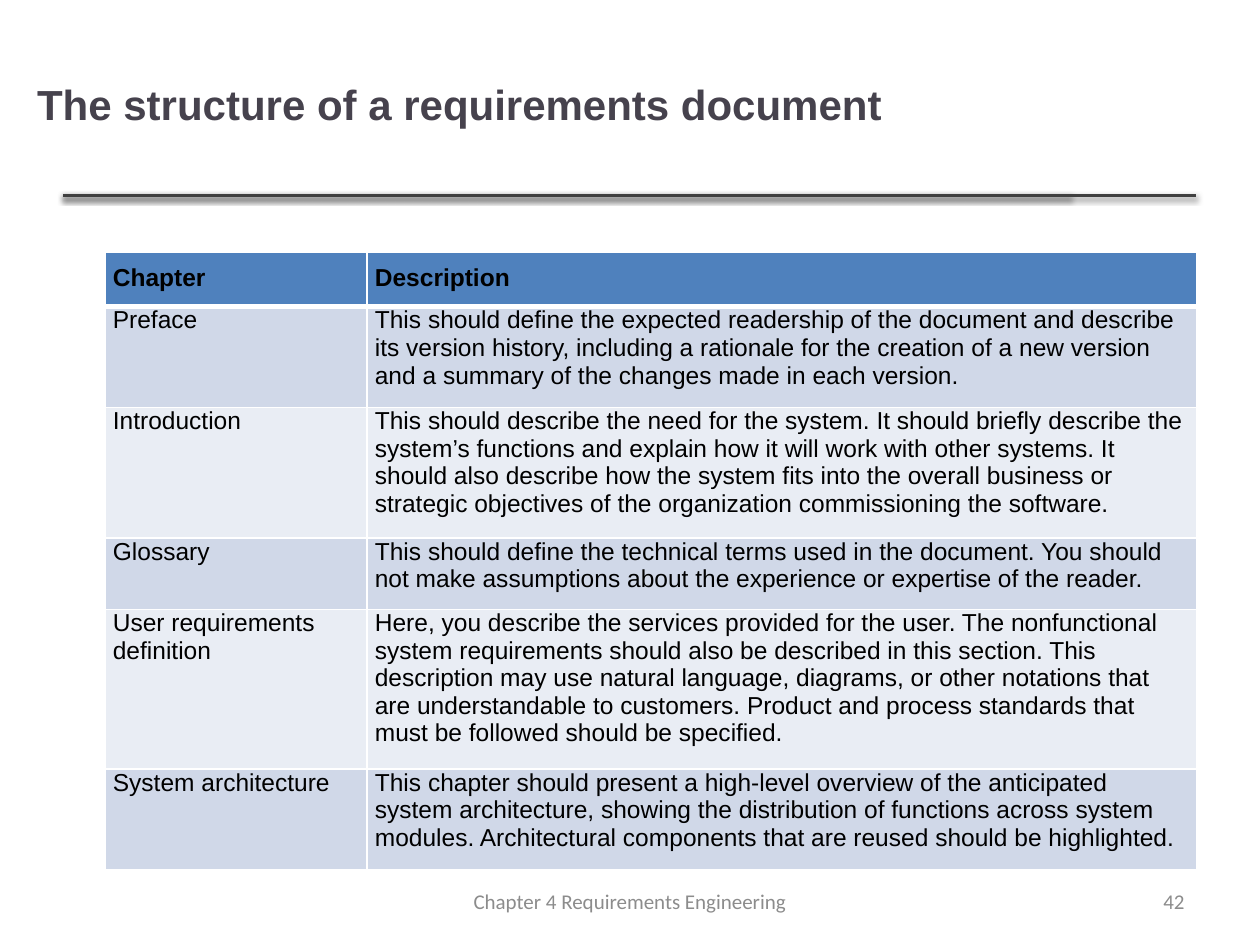
from lxml import etree
from pptx import Presentation
from pptx.dml.color import RGBColor
from pptx.enum.shapes import MSO_CONNECTOR
from pptx.enum.text import MSO_ANCHOR, PP_ALIGN
from pptx.oxml.ns import qn
from pptx.util import Pt

STRAIGHT = MSO_CONNECTOR.STRAIGHT
MIDDLE = MSO_ANCHOR.MIDDLE
LEFT, CENTER, RIGHT, JUSTIFY = PP_ALIGN.LEFT, PP_ALIGN.CENTER, PP_ALIGN.RIGHT, PP_ALIGN.JUSTIFY

BLACK = RGBColor(0x00, 0x00, 0x00)
WHITE = RGBColor(0xFF, 0xFF, 0xFF)
TITLE_GRAY = RGBColor(0x46, 0x42, 0x4D)
RULE_GRAY = RGBColor(0x40, 0x40, 0x40)
FOOTER_GRAY = RGBColor(0x8C, 0x8C, 0x8C)
HEADER_BLUE = RGBColor(0x4F, 0x81, 0xBD)
BANDS = (RGBColor(0xD0, 0xD8, 0xE8), RGBColor(0xE9, 0xED, 0xF4))

COLUMN_WIDTHS = (149.75, 474.25)
ROW_HEIGHT = 29.2
HEADINGS = ("Chapter", "Description")
CHAPTERS = (
    ("Preface", JUSTIFY,
     "This should define the expected readership of the document and describe its version "
     "history, including a rationale for the creation of a new version and a summary of the "
     "changes made in each version."),
    ("Introduction", JUSTIFY,
     "This should describe the need for the system. It should briefly describe the system’s "
     "functions and explain how it will work with other systems. It should also describe how "
     "the system fits into the overall business or strategic objectives of the organization "
     "commissioning the software."),
    ("Glossary", JUSTIFY,
     "This should define the technical terms used in the document. You should not make "
     "assumptions about the experience or expertise of the reader."),
    ("User requirements definition", LEFT,
     "Here, you describe the services provided for the user. The nonfunctional system "
     "requirements should also be described in this section. This description may use natural "
     "language, diagrams, or other notations that are understandable to customers. Product and "
     "process standards that must be followed should be specified."),
    ("System architecture", LEFT,
     "This chapter should present a high-level overview of the anticipated system "
     "architecture, showing the distribution of functions across system modules. Architectural "
     "components that are reused should be highlighted."),
)


def write_text(frame, text, size, color, font, align, bold=False):
    """Put one formatted paragraph into a text frame."""
    frame.text = text
    para = frame.paragraphs[0]
    para.alignment = align
    span = para.runs[0]
    span.font.size = Pt(size)
    span.font.name = font
    span.font.bold = bold
    span.font.color.rgb = color


def add_title(page, text):
    """Place and format the title placeholder."""
    title = page.shapes.title
    title.left, title.top, title.width, title.height = Pt(14), Pt(16.5), Pt(580), Pt(86)
    title.text_frame.vertical_anchor = MIDDLE
    write_text(title.text_frame, text, 24, TITLE_GRAY, "Arial", LEFT, True)


def add_rule(page, right):
    """Draw a horizontal rule with a soft shadow below it."""
    rule = page.shapes.add_connector(STRAIGHT, Pt(36), Pt(111.6), Pt(right), Pt(111.6))
    rule.line.color.rgb = RULE_GRAY
    rule.line.width = Pt(2)
    effects = etree.SubElement(rule._element.spPr, qn("a:effectLst"))
    shadow = etree.SubElement(effects, qn("a:outerShdw"), blurRad=str(Pt(3.1)),
                              dist=str(Pt(1.6)), dir="5400000", rotWithShape="0")
    color = etree.SubElement(shadow, qn("a:srgbClr"), val=str(BLACK))
    etree.SubElement(color, qn("a:alpha"), val="38000")


def add_footer(page, text, left, width, align):
    """Add a small grey text box at the foot of the page."""
    box = page.shapes.add_textbox(Pt(left), Pt(500.5), Pt(width), Pt(28.75))
    box.text_frame.word_wrap = True
    box.text_frame.vertical_anchor = MIDDLE
    write_text(box.text_frame, text, 12, FOOTER_GRAY, "Calibri", align)


def set_borders(cell, top, bottom):
    """Give a cell white borders with the given top and bottom widths."""
    properties = cell._tc.get_or_add_tcPr()
    for side, width in (("L", 1), ("R", 1), ("T", top), ("B", bottom)):
        line = etree.SubElement(properties, qn(f"a:ln{side}"), w=str(Pt(width)))
        fill = etree.SubElement(line, qn("a:solidFill"))
        etree.SubElement(fill, qn("a:srgbClr"), val=str(WHITE))


def fill_cell(cell, text, row, align):
    """Write and style one cell according to its row."""
    header = row == 0
    set_borders(cell, 3 if row == 1 else 1, 3 if header else 1)
    cell.fill.solid()
    cell.fill.fore_color.rgb = HEADER_BLUE if header else BANDS[(row - 1) % 2]
    cell.margin_left = cell.margin_right = Pt(4.5)
    cell.margin_top = Pt(7.2 if header else 0)
    cell.margin_bottom = Pt(7.2)
    write_text(cell.text_frame, text, 14, BLACK, "Arial", align, header)


def add_chapter_table(page):
    """Add the table of chapters and their descriptions."""
    count = len(CHAPTERS) + 1
    table = page.shapes.add_table(count, 2, Pt(60), Pt(144), Pt(sum(COLUMN_WIDTHS)),
                                  Pt(count * ROW_HEIGHT)).table
    for column, width in zip(table.columns, COLUMN_WIDTHS):
        column.width = Pt(width)
    for column, heading in enumerate(HEADINGS):
        fill_cell(table.cell(0, column), heading, 0, JUSTIFY)
    for row, (chapter, align, description) in enumerate(CHAPTERS, 1):
        fill_cell(table.cell(row, 0), chapter, row, align)
        fill_cell(table.cell(row, 1), description, row, LEFT)


def main():
    """Build the slide and save the deck."""
    deck = Presentation()
    deck.slide_width, deck.slide_height = Pt(720), Pt(540)
    page = deck.slides.add_slide(deck.slide_layouts[5])
    for right in (611.5, 683.5):
        add_rule(page, right)
    add_title(page, "The structure of a requirements document")
    add_footer(page, "Chapter 4 Requirements Engineering", 246, 228, CENTER)
    add_footer(page, "42", 516, 168, RIGHT)
    add_chapter_table(page)
    deck.save("out.pptx")


if __name__ == "__main__":
    main()
